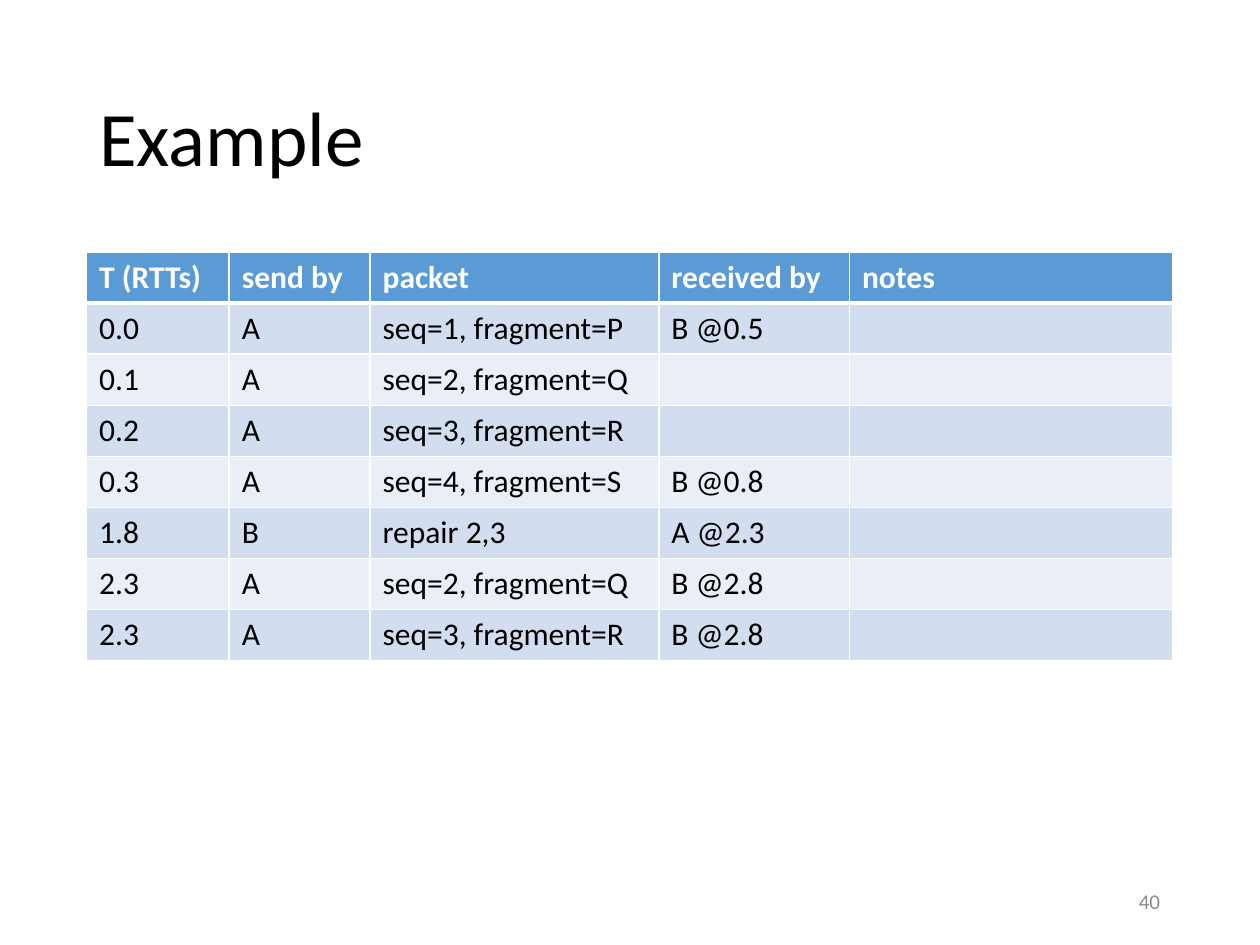
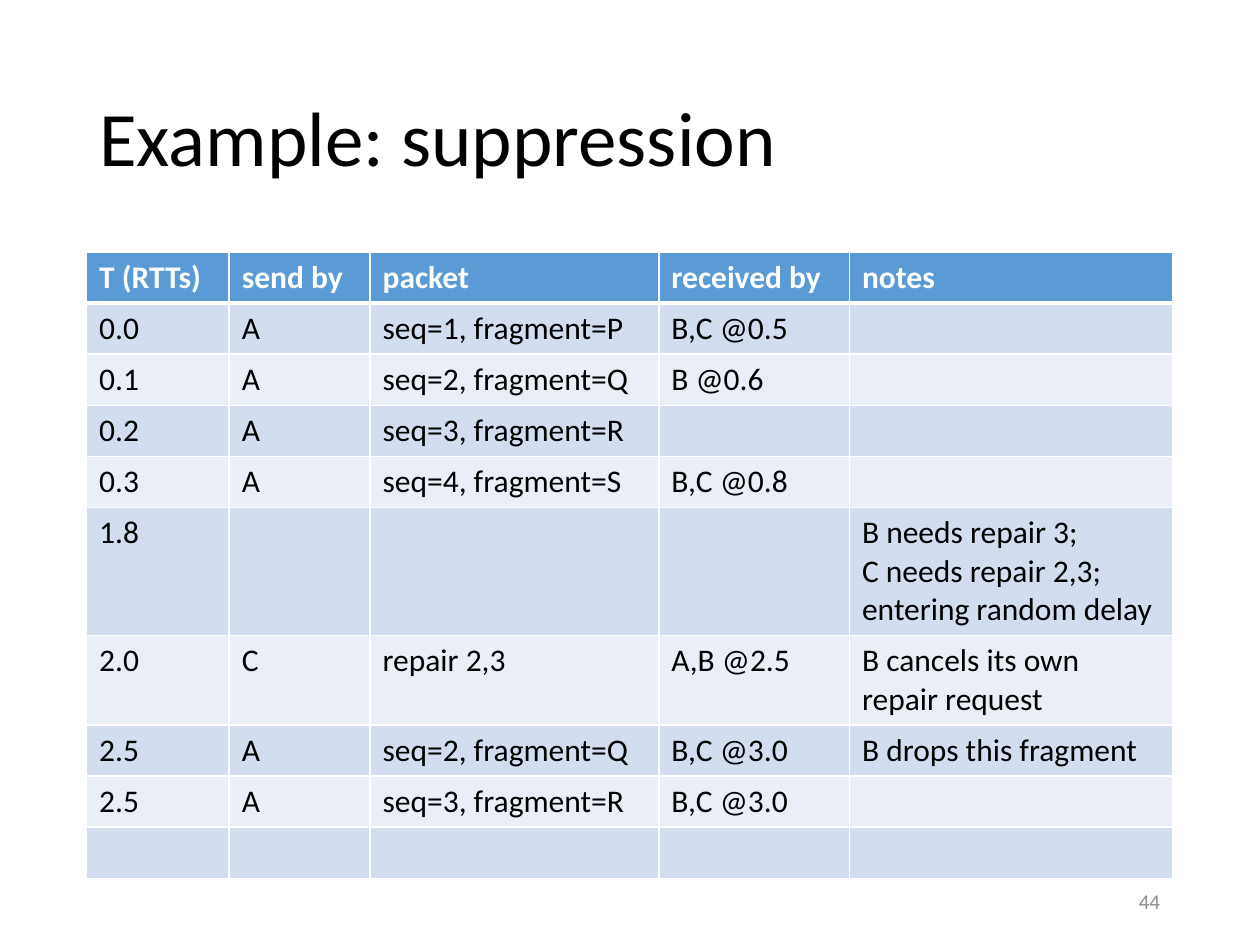
from lxml.etree import SubElement
from pptx import Presentation
from pptx.dml.color import RGBColor
from pptx.enum.text import MSO_ANCHOR, PP_ALIGN
from pptx.oxml.ns import qn
from pptx.util import Pt

HEADER = ("T (RTTs)", "send by", "packet", "received by", "notes")
SLIDES = [
    {
        "title": "Example",
        "number": 40,
        "rows": [
            ("0.0", "A", "seq=1, fragment=P", "B @0.5", ""),
            ("0.1", "A", "seq=2, fragment=Q", "", ""),
            ("0.2", "A", "seq=3, fragment=R", "", ""),
            ("0.3", "A", "seq=4, fragment=S", "B @0.8", ""),
            ("1.8", "B", "repair 2,3", "A @2.3", ""),
            ("2.3", "A", "seq=2, fragment=Q", "B @2.8", ""),
            ("2.3", "A", "seq=3, fragment=R", "B @2.8", ""),
        ],
    },
    {
        "title": "Example: suppression",
        "number": 44,
        "rows": [
            ("0.0", "A", "seq=1, fragment=P", "B,C @0.5", ""),
            ("0.1", "A", "seq=2, fragment=Q", "B @0.6", ""),
            ("0.2", "A", "seq=3, fragment=R", "", ""),
            ("0.3", "A", "seq=4, fragment=S", "B,C @0.8", ""),
            ("1.8", "", "", "",
             "B needs repair 3;\nC needs repair 2,3;\nentering random delay"),
            ("2.0", "C", "repair 2,3", "A,B @2.5", "B cancels its own repair request"),
            ("2.5", "A", "seq=2, fragment=Q", "B,C @3.0", "B drops this fragment"),
            ("2.5", "A", "seq=3, fragment=R", "B,C @3.0", ""),
            ("", "", "", "", ""),
        ],
    },
]

FONT = "Calibri"
BLACK, WHITE, GREY = "000000", "FFFFFF", "8C8C8C"
HEADER_FILL = "5B9BD5"
BAND_FILLS = ("D2DEEF", "EAEFF7")

LEFT, WIDTH = 49.5, 620.5
TITLE_TOP, TITLE_HEIGHT = 28.75, 104.5
TABLE_TOP, ROW_HEIGHT = 144, 29.2
COLUMN_WIDTHS = (81.5, 80.5, 165, 109, 184.5)
NUMBER_TOP, NUMBER_WIDTH, NUMBER_HEIGHT = 500.5, 162, 28.75
THIN, THICK = 1, 3


def color(hex_string):
    return RGBColor.from_string(hex_string)


def format_text(text_frame, size, hex_string, bold=False, align=PP_ALIGN.LEFT):
    for paragraph in text_frame.paragraphs:
        paragraph.alignment = align
        for run in paragraph.runs:
            run.font.name = FONT
            run.font.size = Pt(size)
            run.font.bold = bold
            run.font.color.rgb = color(hex_string)


def set_borders(cell, top, bottom):
    """Draw white borders; call before the fill, which must follow them in the XML."""
    properties = cell._tc.get_or_add_tcPr()
    for side, width in (("L", THIN), ("R", THIN), ("T", top), ("B", bottom)):
        line = SubElement(properties, qn(f"a:ln{side}"), w=str(Pt(width)))
        fill = SubElement(line, qn("a:solidFill"))
        SubElement(fill, qn("a:srgbClr"), val=WHITE)


def add_title(slide, text):
    title = slide.shapes.title
    title.left, title.top = Pt(LEFT), Pt(TITLE_TOP)
    title.width, title.height = Pt(WIDTH), Pt(TITLE_HEIGHT)
    title.text_frame.text = text
    title.text_frame.vertical_anchor = MSO_ANCHOR.MIDDLE
    title.text_frame.paragraphs[0].line_spacing = 0.9
    format_text(title.text_frame, 44, BLACK)


def add_packet_table(slide, body_rows):
    rows = [HEADER, *body_rows]
    table = slide.shapes.add_table(
        len(rows), len(HEADER), Pt(LEFT), Pt(TABLE_TOP),
        Pt(WIDTH), Pt(ROW_HEIGHT * len(rows))).table
    for column, width in zip(table.columns, COLUMN_WIDTHS):
        column.width = Pt(width)
    for row_index, row in enumerate(rows):
        is_header = row_index == 0
        fill = HEADER_FILL if is_header else BAND_FILLS[(row_index - 1) % 2]
        top = THICK if row_index == 1 else THIN
        bottom = THICK if is_header else THIN
        for column_index, text in enumerate(row):
            cell = table.cell(row_index, column_index)
            set_borders(cell, top, bottom)
            cell.fill.solid()
            cell.fill.fore_color.rgb = color(fill)
            cell.text_frame.text = text
            format_text(cell.text_frame, 18, WHITE if is_header else BLACK, is_header)


def add_slide_number(slide, number):
    box = slide.shapes.add_textbox(
        Pt(LEFT + WIDTH - NUMBER_WIDTH), Pt(NUMBER_TOP),
        Pt(NUMBER_WIDTH), Pt(NUMBER_HEIGHT))
    box.text_frame.word_wrap = True
    box.text_frame.vertical_anchor = MSO_ANCHOR.MIDDLE
    box.text_frame.text = str(number)
    format_text(box.text_frame, 12, GREY, align=PP_ALIGN.RIGHT)


def main():
    presentation = Presentation()
    presentation.slide_width, presentation.slide_height = Pt(720), Pt(540)
    title_only = presentation.slide_layouts[5]
    for content in SLIDES:
        slide = presentation.slides.add_slide(title_only)
        add_title(slide, content["title"])
        add_packet_table(slide, content["rows"])
        add_slide_number(slide, content["number"])
    presentation.save("out.pptx")


if __name__ == "__main__":
    main()
